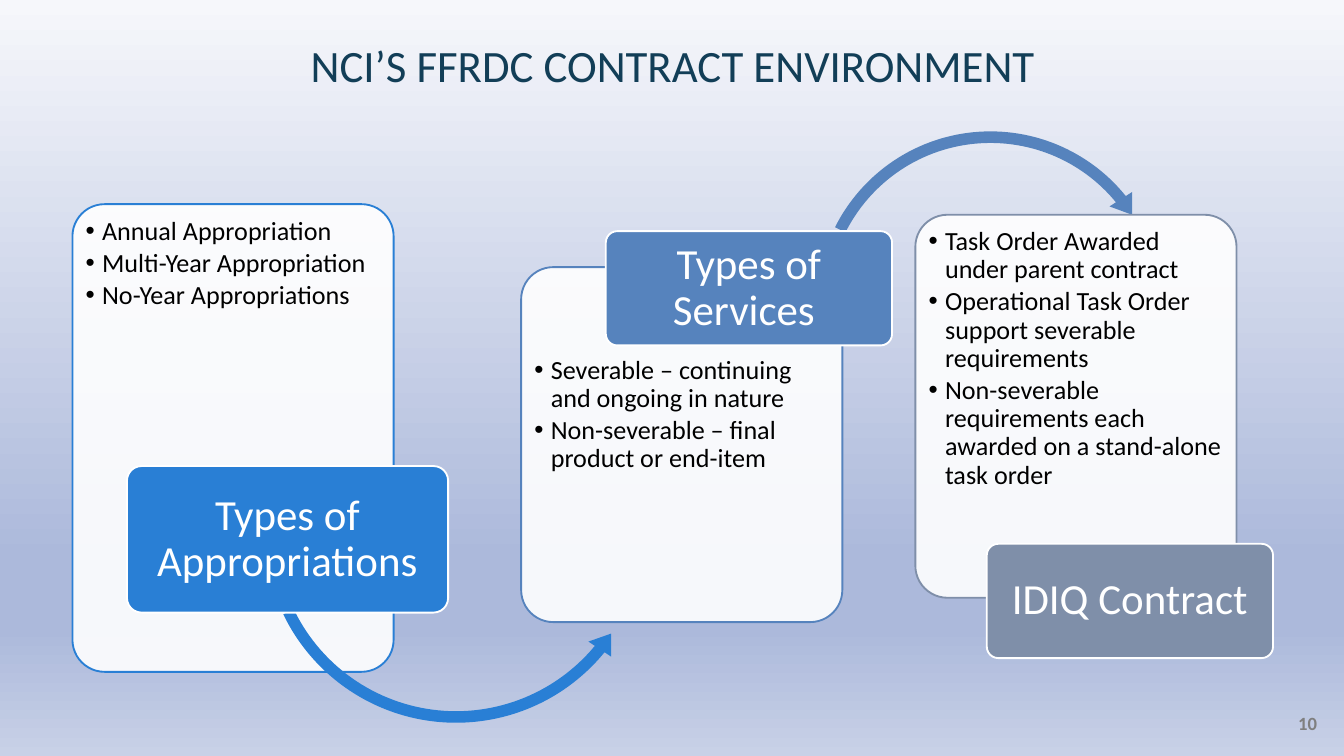
from dataclasses import dataclass
from typing import Any, NamedTuple, Optional

import pptx
import pptx.dml.color
import pptx.enum.shapes
import pptx.enum.text
import pptx.oxml
import pptx.oxml.ns
import pptx.util

Cm, Pt = pptx.util.Cm, pptx.util.Pt
Kind = pptx.enum.shapes.MSO_SHAPE
Align = pptx.enum.text.PP_ALIGN
Anchor = pptx.enum.text.MSO_ANCHOR
Fit = pptx.enum.text.MSO_AUTO_SIZE
qn = pptx.oxml.ns.qn


@dataclass(frozen=True)
class Theme:
    face: str = "Calibri"
    title: str = "123E57"
    body: str = "000000"
    page: str = "7F7F7F"
    white: str = "FFFFFF"
    blue: str = "297FD5"
    steel: str = "5683BD"
    slate: str = "7F8FA9"
    sky: tuple = ((0, "F6F7FB"), (74, "ACB9DB"), (83, "ACB9DB"), (100, "C8D1E7"))
    title_size: int = 24
    plate_size: int = 23
    body_size: int = 14
    page_size: int = 10


class Box(NamedTuple):
    """Place and size in centimetres."""
    left: float
    top: float
    width: float
    height: float


@dataclass(frozen=True)
class Arrow:
    kind: Any
    box: Box
    turns: tuple


@dataclass(frozen=True)
class Step:
    label: str
    items: tuple
    color: str
    panel: Box
    plate: Box
    slot: int  # layout placeholder that holds the list
    low: bool = False  # the list sits under the plate
    arrow: Optional[Arrow] = None


THEME = Theme()
INSET = 0.17
STEPS = (
    Step("Types of Appropriations",
         ("Annual Appropriation", "Multi-Year Appropriation", "No-Year Appropriations"),
         THEME.blue, Box(1.37, 3.86, 6.07, 8.84), Box(2.4, 8.81, 6.07, 2.77), 2,
         arrow=Arrow(Kind.LEFT_CIRCULAR_ARROW, Box(4.85, 6.27, 7.54, 7.54),
                     (0.029, 3.558, 23.638, 92.571, 0.034))),
    Step("Types of Services ",
         ("Severable – continuing and ongoing in nature",
          "Non-severable – final product or end-item"),
         THEME.steel, Box(9.85, 5.05, 6.07, 6.71), Box(11.45, 4.37, 5.41, 2.16), 4,
         low=True,
         arrow=Arrow(Kind.CIRCULAR_ARROW, Box(15.29, 2.34, 6.86, 6.86),
                     (0.032, 3.94, 192.535, 123.985, 0.037))),
    Step("IDIQ Contract",
         ("Task Order Awarded under parent contract",
          "Operational Task Order support severable requirements",
          "Non-severable requirements each awarded on a stand-alone task order"),
         THEME.slate, Box(17.3, 4.06, 6.07, 7.24), Box(18.65, 10.28, 5.41, 2.16), 1),
)


def rgb(code: str) -> Any:
    return pptx.dml.color.RGBColor.from_string(code)


def put(item: Any, values: dict) -> None:
    for name, value in values.items():
        setattr(item, name, value)


def place(shape: Any, box: Box) -> None:
    put(shape, {name: Cm(size) for name, size in box._asdict().items()})


def frame(shape: Any, anchor: Any, side: float = 0, edge: float = 0) -> None:
    put(shape.text_frame, {
        "word_wrap": True, "auto_size": Fit.NONE, "vertical_anchor": anchor,
        "margin_left": Cm(side), "margin_right": Cm(side),
        "margin_top": Cm(edge), "margin_bottom": Cm(edge)})


def write(para: Any, text: str, size: int, color: str, align: Any,
          bold: bool = False, after: float = 0) -> None:
    put(para, {"alignment": align, "line_spacing": 0.9,
               "space_before": Pt(0), "space_after": Pt(after)})
    run = para.add_run()
    run.text = text
    put(run.font, {"name": THEME.face, "size": Pt(size), "bold": bold})
    run.font.color.rgb = rgb(color)


def bullet(para: Any) -> None:
    props = para._p.get_or_add_pPr()
    props.set("marL", str(Cm(0.31)))
    props.set("indent", str(-Cm(0.31)))
    pptx.oxml.ns  # namespace map used by qn
    props.makeelement
    for tag, key, value in (("a:buFont", "typeface", "Arial"), ("a:buChar", "char", "•")):
        mark = props.makeelement(qn(tag), {key: value})
        props.append(mark)


def draw(slide: Any, kind: Any, box: Box, fill: str, line: Optional[str] = None,
         turns: tuple = (0.1,)) -> Any:
    shape = slide.shapes.add_shape(kind, *(Cm(size) for size in box))
    shape.shadow.inherit = False
    for spot, turn in enumerate(turns):
        shape.adjustments[spot] = turn
    shape.fill.solid()
    shape.fill.fore_color.rgb = rgb(fill)
    if line:
        shape.line.color.rgb = rgb(line)
        shape.line.width = Pt(1)
    else:
        shape.line.fill.background()
    return shape


def add_list(slide: Any, step: Step) -> None:
    left, top, width, height = step.panel
    shift = height * 3 / 14  # share of the panel kept for the plate
    holder = slide.placeholders[step.slot]
    place(holder, Box(left + INSET, top + INSET + (shift if step.low else 0),
                      width - 2 * INSET, height - shift - 2 * INSET))
    frame(holder, Anchor.TOP, 0.08, 0.08)
    body = holder.text_frame
    for spot, item in enumerate(step.items):
        para = body.add_paragraph() if spot else body.paragraphs[0]
        para.level = 1
        bullet(para)
        write(para, item, THEME.body_size, THEME.body, Align.LEFT, after=2)
    slide.shapes.element.append(holder.element)  # lift above its panel


def add_step(slide: Any, step: Step) -> None:
    panel = draw(slide, Kind.ROUNDED_RECTANGLE, step.panel, THEME.white, step.color)
    tint = panel.element.spPr.find(qn("a:solidFill"))[0]
    tint.append(tint.makeelement(qn("a:alpha"), {"val": "90000"}))
    add_list(slide, step)
    if step.arrow:
        draw(slide, step.arrow.kind, step.arrow.box, step.color, turns=step.arrow.turns)
    plate = draw(slide, Kind.ROUNDED_RECTANGLE, step.plate, step.color, THEME.white)
    frame(plate, Anchor.MIDDLE, 0.21, 0.16)
    write(plate.text_frame.paragraphs[0], step.label, THEME.plate_size,
          THEME.white, Align.CENTER)


def paint(slide: Any) -> None:
    fill = slide.background.fill
    fill.gradient()
    fill.gradient_angle = 270
    stops = slide.element.find(".//" + qn("a:gsLst"))
    for stop in list(stops):
        stops.remove(stop)
    for spot, color in THEME.sky:
        stop = stops.makeelement(qn("a:gs"), {"pos": str(spot * 1000)})
        stop.append(stop.makeelement(qn("a:srgbClr"), {"val": color}))
        stops.append(stop)


def main() -> None:
    deck = pptx.Presentation()
    put(deck, {"slide_width": Cm(25.4), "slide_height": Cm(14.29)})
    slide = deck.slides.add_slide(deck.slide_layouts.get_by_name("Comparison"))
    paint(slide)

    # Page number
    page = slide.shapes.add_textbox(Cm(24.03), Cm(13.51), Cm(0.86), Cm(0.51))
    frame(page, Anchor.TOP)
    write(page.text_frame.paragraphs[0], "10", THEME.page_size, THEME.page,
          Align.RIGHT, bold=True)

    # Title
    title = slide.shapes.title
    place(title, Box(1.37, 0.86, 22.68, 0.89))
    frame(title, Anchor.BOTTOM)
    write(title.text_frame.paragraphs[0], "NCI’S FFRDC CONTRACT ENVIRONMENT",
          THEME.title_size, THEME.title, Align.CENTER)

    # Three steps, each with panel, list, arrow and plate
    for step in STEPS:
        add_step(slide, step)

    # Spare placeholder of the layout
    spare = slide.placeholders[3].element
    spare.getparent().remove(spare)
    deck.save("out.pptx")


if __name__ == "__main__":
    main()
